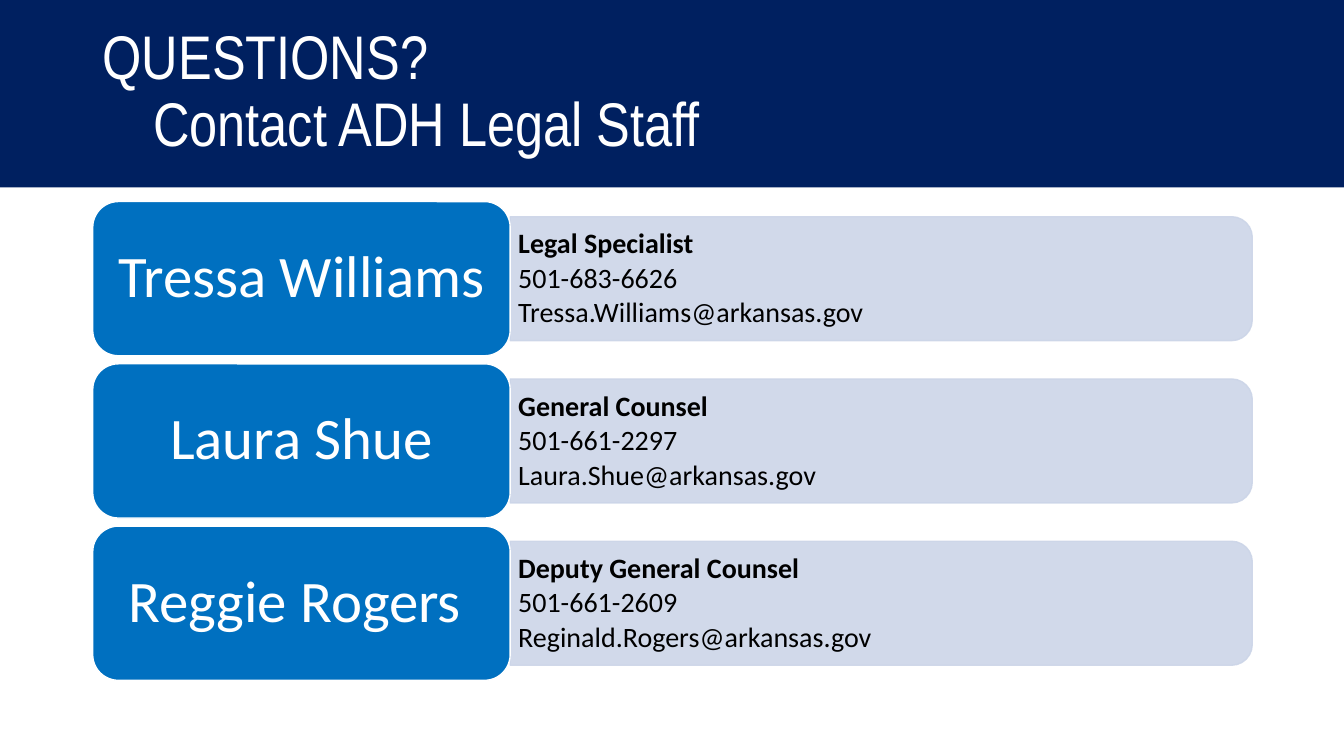
import pptx
import pptx.util
import pptx.dml.color
import pptx.enum.shapes
import pptx.enum.text
import pptx.oxml.ns
import lxml.etree

Inches, Pt = pptx.util.Inches, pptx.util.Pt
SHAPE = pptx.enum.shapes.MSO_SHAPE
ALIGN = pptx.enum.text.PP_ALIGN
MIDDLE = pptx.enum.text.MSO_ANCHOR.MIDDLE
COLORS = {"navy": "002060", "blue": "0070C0", "pale": "CCD5E8",
          "white": "FFFFFF", "black": "000000"}
STAFF = [
    ("Tressa Williams", "Legal Specialist", "501-683-6626",
     "Tressa.Williams@arkansas.gov"),
    ("Laura Shue", "General Counsel", "501-661-2297",
     "Laura.Shue@arkansas.gov"),
    ("Reggie Rogers ", "Deputy General Counsel", "501-661-2609",
     "Reginald.Rogers@arkansas.gov"),
]
WIDE, HIGH = 13.33, 7.5
LEFT, SPLIT, RIGHT = 0.92, 5.06, 12.42
TOP, PITCH, CARD, BAR = 2, 1.61, 1.53, 1.23


def paint(shape, fill, line=None, alpha=None):
    """Fill and outline a shape; alpha is the opacity in percent."""
    shape.shadow.inherit = False
    parts = [shape.fill]
    shape.fill.solid()
    shape.fill.fore_color.rgb = pptx.dml.color.RGBColor.from_string(COLORS[fill])
    if line:
        shape.line.width = Pt(1)
        shape.line.color.rgb = pptx.dml.color.RGBColor.from_string(COLORS[line])
    else:
        shape.line.fill.background()
    if alpha:
        for color in shape._element.spPr.iter(pptx.oxml.ns.qn("a:srgbClr")):
            lxml.etree.SubElement(color, pptx.oxml.ns.qn("a:alpha"),
                                  val=str(alpha * 1000))


def write(shape, lines, font, size, color, inset, align=ALIGN.LEFT, after=0):
    """Set each line as a paragraph, centred vertically; inset is (side, top)."""
    frame = shape.text_frame
    frame.word_wrap = True
    frame.vertical_anchor = MIDDLE
    frame.margin_left = frame.margin_right = Inches(inset[0])
    frame.margin_top = frame.margin_bottom = Inches(inset[1])
    frame.text = "\n".join(lines)
    for para in frame.paragraphs:
        para.alignment = align
        para.line_spacing = 0.9
        para.space_after = Pt(after)
        para.font.name = font
        para.font.size = Pt(size)
        para.font.color.rgb = pptx.dml.color.RGBColor.from_string(COLORS[color])


deck = pptx.Presentation()
deck.slide_width, deck.slide_height = Inches(WIDE), Inches(HIGH)
slide = deck.slides.add_slide(deck.slide_layouts[6])
shapes = slide.shapes

band = shapes.add_shape(SHAPE.RECTANGLE, 0, 0, Inches(WIDE), Inches(1.86))
paint(band, "navy")
title = shapes.add_textbox(Inches(LEFT), 0, Inches(8.44), Inches(1.85))
write(title, ["QUESTIONS?\v\tContact ADH Legal Staff"],
      "Arial Narrow", 44, "white", (0.1, 0.05))

for row, (name, *facts) in enumerate(STAFF):
    top = TOP + row * PITCH
    mid = top + CARD / 2
    span = RIGHT - SPLIT

    # The bar stands upright before its quarter turn about its centre
    bar = shapes.add_shape(
        SHAPE.ROUND_2_SAME_RECTANGLE, Inches((SPLIT + RIGHT - BAR) / 2),
        Inches(mid - span / 2), Inches(BAR), Inches(span))
    bar.rotation = 90
    paint(bar, "pale", "pale", 90)

    info = shapes.add_textbox(Inches(SPLIT), Inches(mid - 0.55),
                              Inches(7.3), Inches(1.11))
    write(info, facts, "Calibri", 20, "black", (0.08, 0.04), after=3)
    info.text_frame.paragraphs[0].font.bold = True

    card = shapes.add_shape(SHAPE.ROUNDED_RECTANGLE, Inches(LEFT), Inches(top),
                            Inches(SPLIT - LEFT), Inches(CARD))
    paint(card, "blue", "white")
    write(card, [name], "Calibri", 42, "white", (0.09, 0.09), ALIGN.CENTER)

deck.save("out.pptx")
